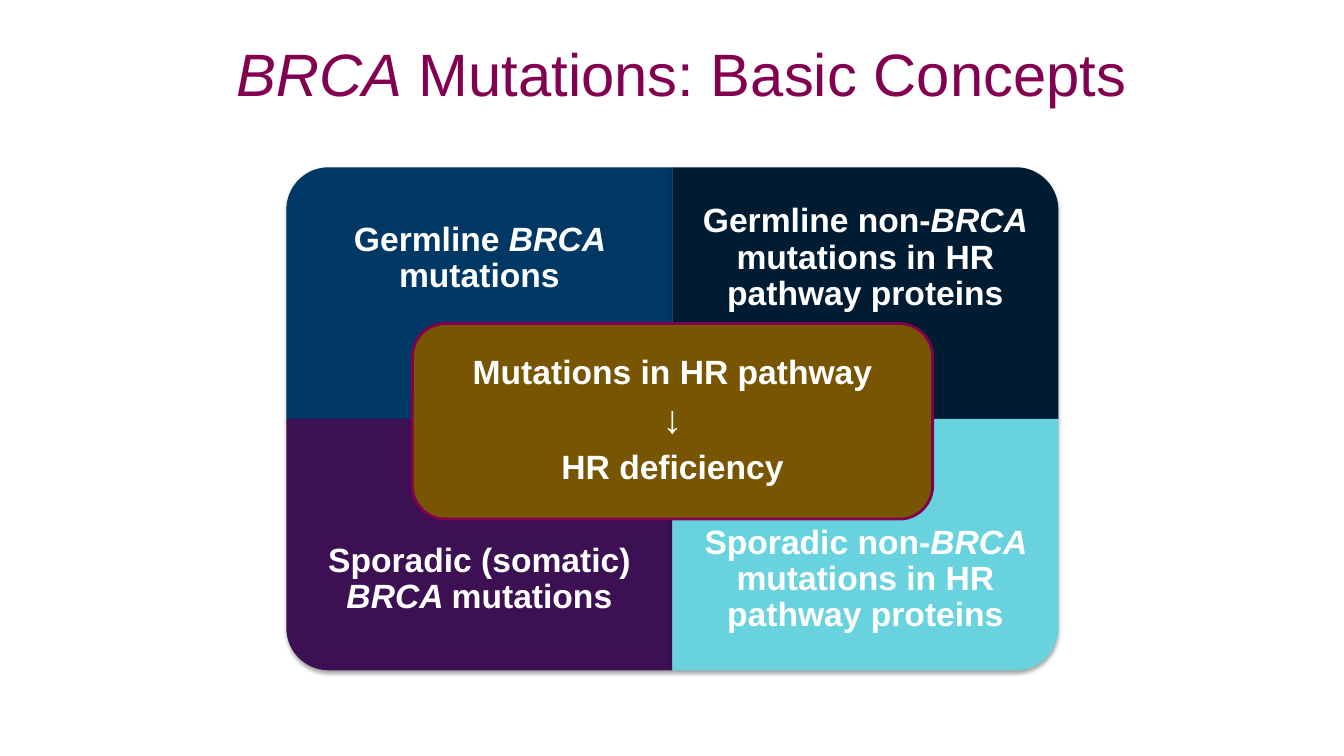
import math
from dataclasses import dataclass

import pptx
import pptx.dml.color
import pptx.enum.shapes
import pptx.enum.text
import pptx.oxml
import pptx.oxml.ns
import pptx.util

ANCHOR = pptx.enum.text.MSO_ANCHOR


@dataclass(frozen=True)
class Theme:
    font: str = "Arial"
    title_size: float = 42.7
    body_size: float = 24
    arrow_size: float = 28
    plum: str = "830051"
    white: str = "FFFFFF"
    navy: str = "003865"
    midnight: str = "001C32"
    purple: str = "3C1053"
    aqua: str = "68D2DF"
    bronze: str = "785500"


def rgb(value):
    return pptx.dml.color.RGBColor.from_string(value)


class ConceptSlide:
    """A blank slide measured on a grid of 100 columns by 100 rows."""

    def __init__(self, prs, theme):
        self.theme = theme
        self.col = prs.slide_width / 100
        self.row = prs.slide_height / 100
        self.slide = prs.slides.add_slide(prs.slide_layouts[6])

    def box(self, left, top, width, height):
        return (round(left * self.col), round(top * self.row),
                round(width * self.col), round(height * self.row))

    def set_text(self, sp, paragraphs, color, anchor, margins, bold=True,
                 line_spacing=0.9, space_after=0):
        """Fill sp with (size, [(text, italic), ...]) paragraphs; margins in rows."""
        tf = sp.text_frame
        tf.word_wrap = True
        tf.vertical_anchor = anchor
        tf.margin_left, tf.margin_top, tf.margin_right, tf.margin_bottom = (
            round(m * self.row) for m in margins)
        for i, (size, runs) in enumerate(paragraphs):
            p = tf.add_paragraph() if i else tf.paragraphs[0]
            p.alignment = pptx.enum.text.PP_ALIGN.CENTER
            p.line_spacing = line_spacing
            p.space_after = pptx.util.Pt(space_after)
            for text, italic in runs:
                r = p.add_run()
                r.text = text
                r.font.name = self.theme.font
                r.font.size = pptx.util.Pt(size)
                r.font.bold = bold
                r.font.italic = italic
                r.font.color.rgb = rgb(color)

    def title(self, runs):
        sp = self.slide.shapes.add_textbox(*self.box(5.03, 3.47, 91.37, 16.13))
        self.set_text(sp, [(self.theme.title_size, runs)], self.theme.plum,
                      ANCHOR.TOP, (1.33, 1.33, 1.33, 0.67), bold=False,
                      line_spacing=1.0)

    def add_shadow(self, sp):
        effects = sp._element.spPr.find(pptx.oxml.ns.qn("a:effectLst"))
        effects.append(pptx.oxml.parse_xml(
            f'<a:outerShdw {pptx.oxml.ns.nsdecls("a")} blurRad="39370" dist="22860" '
            'dir="5400000" rotWithShape="0"><a:srgbClr val="000000">'
            '<a:alpha val="35000"/></a:srgbClr></a:outerShdw>'))

    def quadrant(self, side, level, fill, runs):
        """Draw a quarter panel; side and level are -1 or 1 from the centre."""
        center_x, center_y, width, height = self.box(50.03, 55.4, 28.72, 33.27)
        radius = 5.6 * self.row
        arc_x = center_x + side * (width - radius)
        arc_y = center_y + level * (height - radius)
        steps = 24
        angles = [math.pi / 2 * i / steps for i in range(steps + 1)]
        outline = [(center_x + side * width, center_y)]
        outline += [(arc_x + side * radius * math.cos(a),
                     arc_y + level * radius * math.sin(a)) for a in angles]
        outline.append((center_x, center_y + level * height))
        builder = self.slide.shapes.build_freeform(center_x, center_y)
        builder.add_line_segments([(round(x), round(y)) for x, y in outline], close=True)
        sp = builder.convert_to_shape()
        sp.fill.solid()
        sp.fill.fore_color.rgb = rgb(fill)
        sp.line.fill.background()
        sp.shadow.inherit = False
        self.add_shadow(sp)
        edge, inner = 2.53, 11.73
        margins = (edge, edge, edge, inner) if level < 0 else (edge, inner, edge, edge)
        self.set_text(sp, [(self.theme.body_size, runs)], self.theme.white,
                      ANCHOR.MIDDLE, margins, space_after=8.4)

    def center_panel(self, paragraphs):
        sp = self.slide.shapes.add_shape(
            pptx.enum.shapes.MSO_SHAPE.ROUNDED_RECTANGLE,
            *self.box(30.68, 42.8, 38.71, 25.87))
        sp.adjustments[0] = 0.17
        sp.fill.solid()
        sp.fill.fore_color.rgb = rgb(self.theme.bronze)
        sp.line.color.rgb = rgb(self.theme.plum)
        sp.line.width = pptx.util.Pt(2)
        sp.shadow.inherit = False
        self.set_text(sp, paragraphs, self.theme.white, ANCHOR.MIDDLE,
                      (1.3,) * 4, space_after=6)


def main():
    prs = pptx.Presentation()
    prs.slide_width = pptx.util.Inches(13.33)
    prs.slide_height = pptx.util.Inches(7.5)
    theme = Theme()
    s = ConceptSlide(prs, theme)

    s.title([("BRCA", True), (" Mutations: Basic Concepts", False)])
    quadrants = [
        (-1, -1, theme.navy,
         [("Germline ", False), ("BRCA ", True), ("mutations", False)]),
        (1, -1, theme.midnight,
         [("Germline non-", False), ("BRCA", True),
          (" mutations in HR pathway proteins", False)]),
        (-1, 1, theme.purple,
         [("Sporadic (somatic) ", False), ("BRCA ", True), ("mutations", False)]),
        (1, 1, theme.aqua,
         [("Sporadic non-", False), ("BRCA ", True),
          ("mutations in HR pathway proteins", False)]),
    ]
    for side, level, fill, runs in quadrants:
        s.quadrant(side, level, fill, runs)
    s.center_panel([
        (theme.body_size, [("Mutations in HR pathway", False)]),
        (theme.arrow_size, [("↓", False)]),
        (theme.body_size, [("HR deficiency", False)]),
    ])
    prs.save("out.pptx")


if __name__ == "__main__":
    main()
